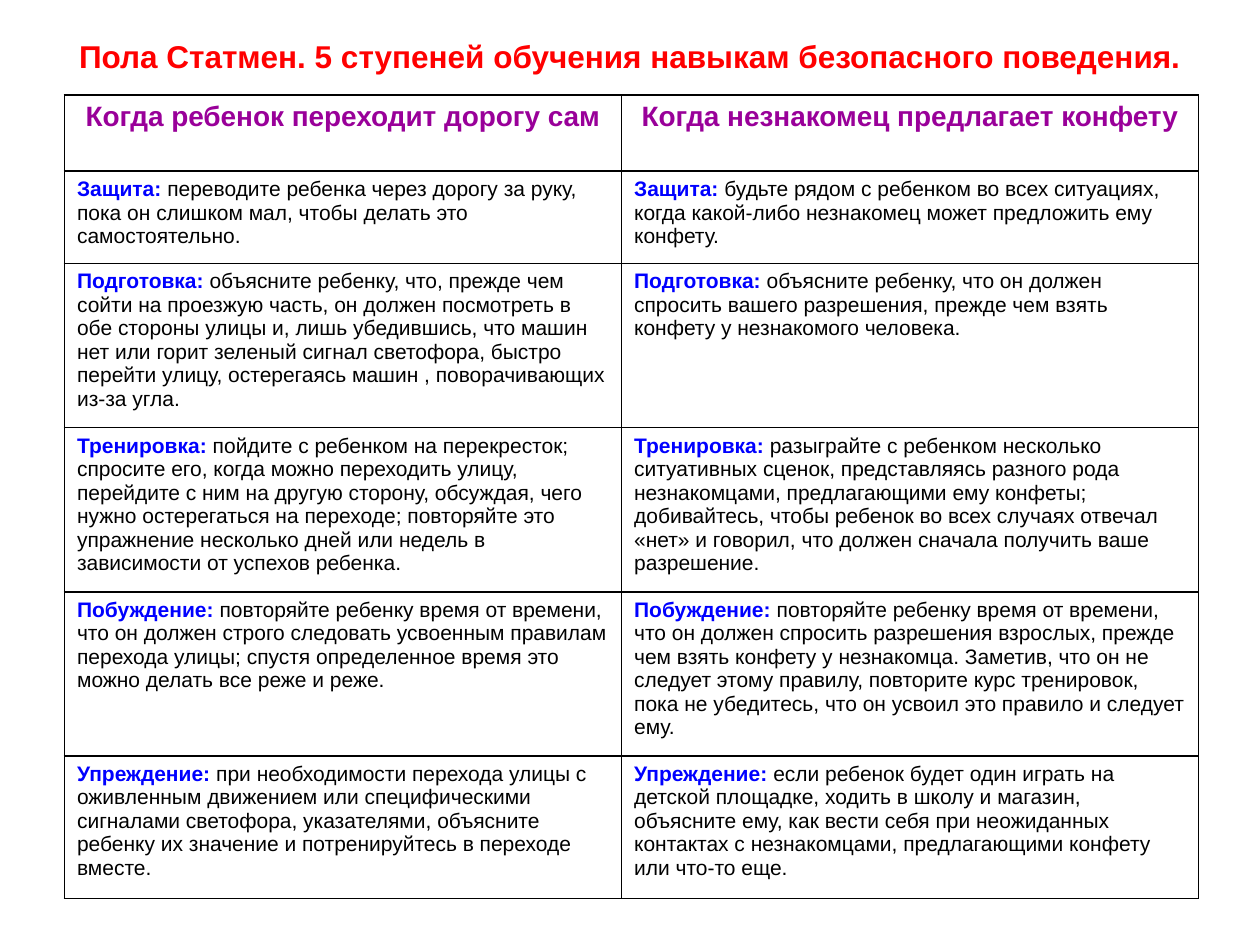
from lxml.etree import fromstring
from pptx import Presentation
from pptx.dml.color import RGBColor
from pptx.enum.text import MSO_ANCHOR, PP_ALIGN
from pptx.util import Cm, Pt

NS = "http://schemas.openxmlformats.org/drawingml/2006/main"
RED, PURPLE, BLUE, BLACK = "FF0000", "990099", "0000FF", "000000"

TITLE = "Пола Статмен. 5 ступеней обучения навыкам безопасного поведения."
HEADS = ["Когда ребенок переходит дорогу сам", "Когда незнакомец предлагает конфету"]
STEPS = [
    ("Защита:",
     "переводите ребенка через дорогу за руку, пока он слишком мал, чтобы делать это "
     "самостоятельно.",
     "будьте рядом с ребенком во всех ситуациях, когда какой-либо незнакомец может "
     "предложить ему конфету."),
    ("Подготовка:",
     "объясните ребенку, что, прежде чем сойти на проезжую часть, он должен посмотреть "
     "в обе стороны улицы и, лишь убедившись, что машин нет или горит зеленый сигнал "
     "светофора, быстро перейти улицу, остерегаясь машин , поворачивающих из-за угла.",
     "объясните ребенку, что он должен спросить вашего разрешения, прежде чем взять "
     "конфету у незнакомого человека."),
    ("Тренировка:",
     "пойдите с ребенком на перекресток; спросите его, когда можно переходить улицу, "
     "перейдите с ним на другую сторону, обсуждая, чего нужно остерегаться на переходе; "
     "повторяйте это упражнение несколько дней или недель в зависимости от успехов ребенка.",
     "разыграйте с ребенком несколько ситуативных сценок, представляясь разного рода "
     "незнакомцами, предлагающими ему конфеты; добивайтесь, чтобы ребенок во всех случаях "
     "отвечал «нет» и говорил, что должен сначала получить ваше разрешение."),
    ("Побуждение:",
     "повторяйте ребенку время от времени, что он должен строго следовать усвоенным "
     "правилам перехода улицы; спустя определенное время это можно делать все реже и реже.",
     "повторяйте ребенку время от времени, что он должен спросить разрешения взрослых, "
     "прежде чем взять конфету у незнакомца. Заметив, что он не следует этому правилу, "
     "повторите курс тренировок, пока не убедитесь, что он усвоил это правило и следует ему."),
    ("Упреждение:",
     "при необходимости перехода улицы с оживленным движением или специфическими "
     "сигналами светофора, указателями, объясните ребенку их значение и потренируйтесь "
     "в переходе вместе.",
     "если ребенок будет один играть на детской площадке, ходить в школу и магазин, "
     "объясните ему, как вести себя при неожиданных контактах с незнакомцами, "
     "предлагающими конфету или что-то еще."),
]
WIDTHS = [11.23, 11.63]
HEIGHTS = [1.53, 1.86, 3.31, 3.31, 3.31, 2.87]


def paint(color, code):
    color.rgb = RGBColor.from_string(code)


class Page:
    def __init__(self, slide, font="Arial"):
        self.slide = slide
        self.font = font

    def run(self, para, text, size, color, bold=False):
        run = para.add_run()
        run.text = text
        run.font.name = self.font
        run.font.size = Pt(size)
        run.font.bold = bold
        paint(run.font.color, color)

    def title(self, text, *box):
        frame = self.slide.shapes.add_textbox(*map(Cm, box)).text_frame
        frame.word_wrap = True
        frame.vertical_anchor = MSO_ANCHOR.MIDDLE
        para = frame.paragraphs[0]
        para.alignment = PP_ALIGN.CENTER
        self.run(para, text, 18, RED, True)

    def border(self, cell):
        cell.fill.background()
        props = cell._tc.get_or_add_tcPr()
        for i, side in enumerate("LRTB"):
            props.insert(i, fromstring(
                f'<a:ln{side} xmlns:a="{NS}" w="{Pt(1)}"><a:solidFill>'
                f'<a:srgbClr val="{BLACK}"/></a:solidFill></a:ln{side}>'))

    def head(self, cell, text):
        para = cell.text_frame.paragraphs[0]
        para.alignment = PP_ALIGN.CENTER
        props = para._p.get_or_add_pPr()
        props.set("marL", str(Cm(0.95)))
        props.set("indent", str(Cm(-0.95)))
        self.run(para, text, 16, PURPLE, True)

    def step(self, cell, name, text):
        para = cell.text_frame.paragraphs[0]
        self.run(para, name, 12, BLUE, True)
        self.run(para, " " + text, 12, BLACK)

    def table(self, left, top, widths, heights):
        box = map(Cm, (left, top, sum(widths), sum(heights)))
        table = self.slide.shapes.add_table(len(heights), len(widths), *box).table
        table.first_row = table.horz_banding = False
        for col, width in zip(table.columns, widths):
            col.width = Cm(width)
        for row, height in zip(table.rows, heights):
            row.height = Cm(height)
        for cell in table.iter_cells():
            self.border(cell)
        return table


def main():
    deck = Presentation()
    deck.slide_width, deck.slide_height = Cm(25.4), Cm(19.05)
    page = Page(deck.slides.add_slide(deck.slide_layouts[6]))
    page.title(TITLE, 0.5, 0.35, 24.4, 1.55)
    table = page.table(1.3, 1.92, WIDTHS, HEIGHTS)
    for col, text in enumerate(HEADS):
        page.head(table.cell(0, col), text)
    for row, (name, *texts) in enumerate(STEPS, 1):
        for col, text in enumerate(texts):
            page.step(table.cell(row, col), name, text)
    deck.save("out.pptx")


if __name__ == "__main__":
    main()
